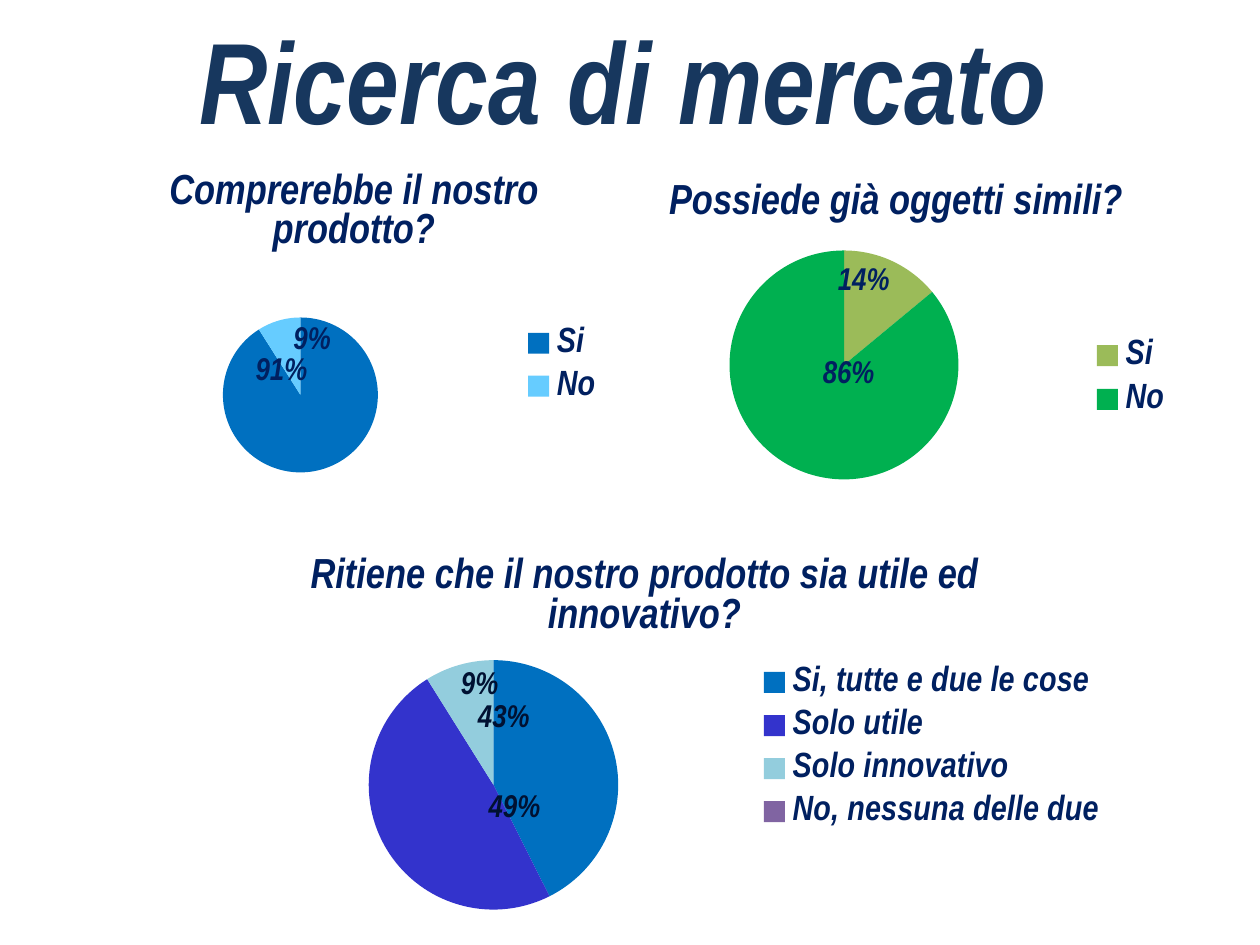
"""Build the market research slide with its three survey pie charts."""
from dataclasses import dataclass, field

from lxml.etree import SubElement
from pptx import Presentation
from pptx.chart.data import CategoryChartData
from pptx.dml.color import RGBColor
from pptx.enum.chart import XL_CHART_TYPE, XL_LABEL_POSITION, XL_LEGEND_POSITION
from pptx.enum.text import MSO_ANCHOR, PP_ALIGN
from pptx.oxml.ns import qn
from pptx.util import Inches, Pt


@dataclass(frozen=True)
class Theme:
    face: str = "Arial Narrow"
    heading: str = "17375E"
    navy: str = "002060"
    dark_navy: str = "001132"
    heading_size: int = 66
    question_size: int = 24
    legend_size: int = 20
    label_size: int = 18


@dataclass(frozen=True)
class Answer:
    text: str
    value: int
    color: str
    label_shift: tuple[float, float] | None = None


@dataclass(frozen=True)
class Survey:
    question: str
    box: tuple[float, float, float, float]
    plot: tuple[float, float, float, float]
    legend: tuple[float, float, float, float]
    answers: list[Answer] = field(default_factory=list)
    label_color: str = Theme.navy


THEME = Theme()

SURVEYS = [
    Survey(
        "Ritiene che il nostro prodotto sia utile ed innovativo?",
        (1.25, 4.22, 7.73, 3), (0, 0.34, 0.69, 0.66), (0.61, 0.33, 0.37, 0.48),
        [
            Answer("Si, tutte e due le cose", 43, "0070C0", (-0.08, -0.14)),
            Answer("Solo utile", 49, "3333CC", (0.1, -0.05)),
            Answer("Solo innovativo", 9, "93CDDD"),
            Answer("No, nessuna delle due", 0, "8064A2"),
        ],
        THEME.dark_navy,
    ),
    Survey(
        "Comprerebbe il nostro prodotto?",
        (0.31, 1.17, 5, 3), (0.29, 0.45, 0.25, 0.41), (0.76, 0.45, 0.14, 0.25),
        [
            Answer("Si", 91, "0070C0", (-0.02, -0.2)),
            Answer("No", 9, "66CCFF", (0.02, 0)),
        ],
    ),
    Survey(
        "Possiede già oggetti simili?",
        (4.69, 1.25, 4.84, 2.84), (0.08, 0.26, 0.67, 0.64), (0.82, 0.48, 0.13, 0.27),
        [
            Answer("Si", 14, "9BBB59"),
            Answer("No", 86, "00B050", (0.04, -0.2)),
        ],
    ),
]


def style_font(font, size: int, color: str) -> None:
    """Apply the slide's bold italic face to a font."""
    font.name = THEME.face
    font.size = Pt(size)
    font.bold = True
    font.italic = True
    font.color.rgb = RGBColor.from_string(color)


def write_text(frame, text: str, *, size: int, color: str, align=PP_ALIGN.CENTER) -> None:
    """Write one formatted paragraph into a text frame."""
    paragraph = frame.paragraphs[0]
    paragraph.alignment = align
    run = paragraph.add_run()
    run.text = text
    style_font(run.font, size, color)


def set_layout(parent, index: int, settings: dict[str, str | float]) -> None:
    """Give a chart part a manual layout at its place in the schema order."""
    for previous in parent.findall(qn("c:layout")):
        parent.remove(previous)
    layout = SubElement(parent, qn("c:layout"))
    manual = SubElement(layout, qn("c:manualLayout"))
    for name, value in settings.items():
        SubElement(manual, qn(f"c:{name}")).set("val", str(value))
    parent.insert(index, layout)


def frame_settings(box: tuple[float, float, float, float]) -> dict[str, str | float]:
    """Return layout settings for a box in fractions of the chart."""
    return {"xMode": "edge", "yMode": "edge", **dict(zip("xywh", box))}


def label_answers(series, survey: Survey) -> None:
    """Show percentages, shifting chosen labels and dropping empty slices."""
    labels = series.data_labels
    labels.show_percentage = True
    labels.show_value = False
    labels.number_format = "0%"
    labels.number_format_is_linked = False
    labels.position = XL_LABEL_POSITION.INSIDE_END
    style_font(labels.font, THEME.label_size, survey.label_color)
    for index, answer in enumerate(survey.answers):
        if answer.value and answer.label_shift is None:
            continue
        label = series.points[index].data_label
        label.position = XL_LABEL_POSITION.INSIDE_END
        style_font(label.font, THEME.label_size, survey.label_color)
        element = labels._element.xpath(f"c:dLbl[c:idx/@val='{index}']")[0]
        if not answer.value:
            for child in list(element)[1:]:
                element.remove(child)
            SubElement(element, qn("c:delete")).set("val", "1")
            continue
        element.find(qn("c:showVal")).set("val", "0")
        element.find(qn("c:showPercent")).set("val", "1")
        set_layout(element, 1, dict(zip("xy", answer.label_shift)))


def draw_survey(slide, survey: Survey) -> None:
    """Draw one survey question as a pie chart."""
    data = CategoryChartData()
    data.categories = [answer.text for answer in survey.answers]
    data.add_series("Series 1", [answer.value for answer in survey.answers])
    chart = slide.shapes.add_chart(XL_CHART_TYPE.PIE, *map(Inches, survey.box), data).chart
    style_font(chart.font, THEME.legend_size, THEME.navy)

    chart.has_title = True
    write_text(chart.chart_title.text_frame, survey.question,
               size=THEME.question_size, color=THEME.navy)

    chart.has_legend = True
    chart.legend.position = XL_LEGEND_POSITION.RIGHT
    chart.legend.include_in_layout = False
    style_font(chart.legend.font, THEME.legend_size, THEME.navy)
    set_layout(chart.legend._element, 1, frame_settings(survey.legend))

    pie = chart.plots[0]
    pie.vary_by_categories = True
    set_layout(pie._element.getparent(), 0,
               {"layoutTarget": "inner", **frame_settings(survey.plot)})
    series = pie.series[0]
    for index, answer in enumerate(survey.answers):
        fill = series.points[index].format.fill
        fill.solid()
        fill.fore_color.rgb = RGBColor.from_string(answer.color)
    label_answers(series, survey)


def main() -> None:
    """Build and save the slide."""
    deck = Presentation()
    deck.slide_width, deck.slide_height = Inches(10), Inches(7.5)
    slide = deck.slides.add_slide(deck.slide_layouts[6])
    heading = slide.shapes.add_textbox(Inches(0.55), Inches(0), Inches(9), Inches(1.25)).text_frame
    heading.word_wrap = True
    heading.vertical_anchor = MSO_ANCHOR.MIDDLE
    write_text(heading, "Ricerca di mercato ", size=THEME.heading_size, color=THEME.heading)
    for survey in SURVEYS:
        draw_survey(slide, survey)
    deck.save("out.pptx")


if __name__ == "__main__":
    main()
